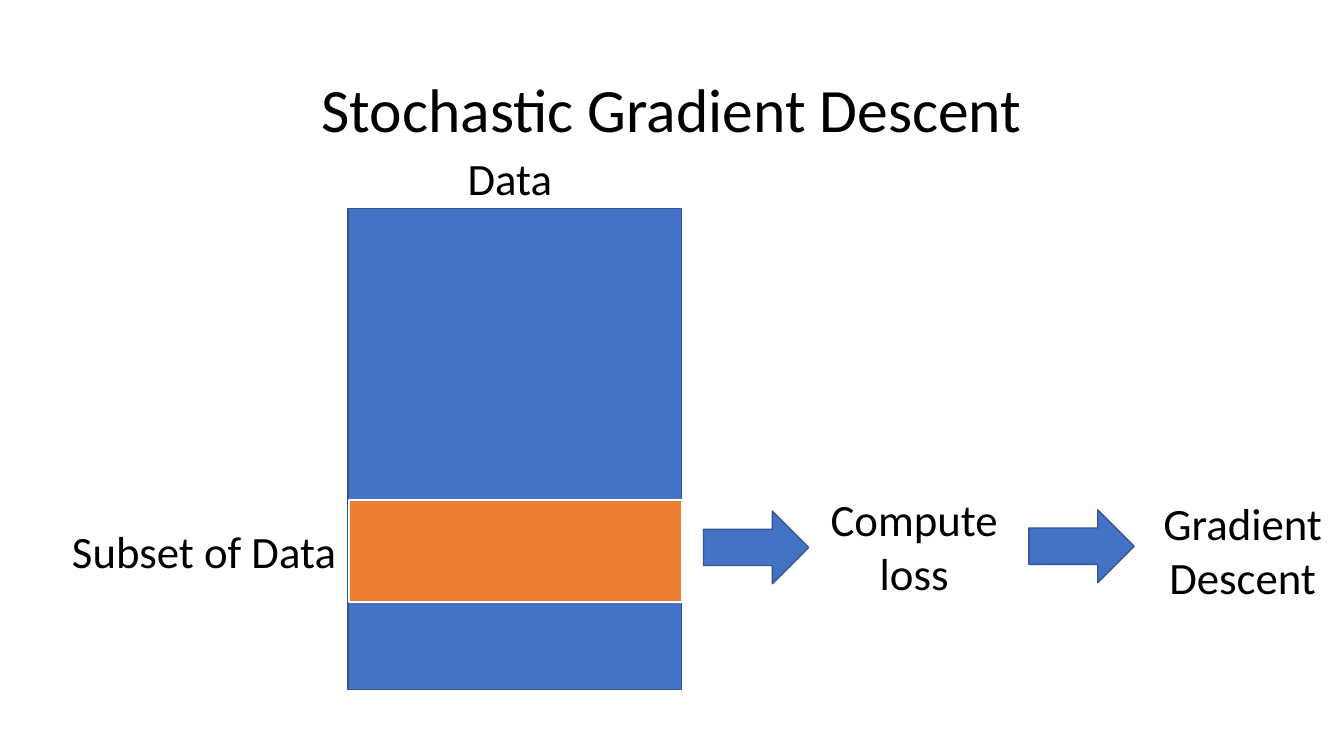
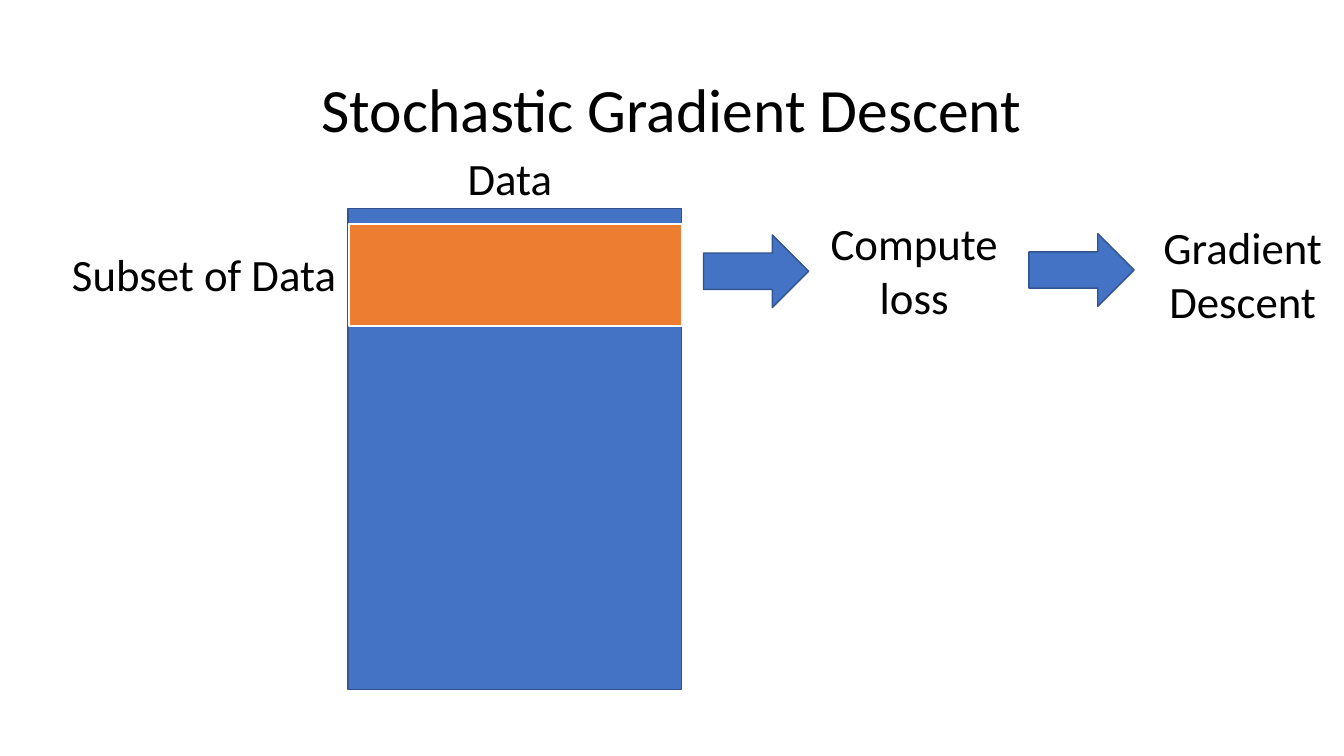
from pptx import Presentation
from pptx.dml.color import RGBColor
from pptx.enum.shapes import MSO_SHAPE
from pptx.enum.text import MSO_ANCHOR, PP_ALIGN
from pptx.util import Cm, Pt

RECTANGLE, ARROW = MSO_SHAPE.RECTANGLE, MSO_SHAPE.RIGHT_ARROW
CENTER, MIDDLE = PP_ALIGN.CENTER, MSO_ANCHOR.MIDDLE
TITLE_ONLY = 5

FONT = "Calibri"
COLORS = {"text": "000000", "data": "4472C4", "outline": "325491",
          "subset": "ED7D31", "white": "FFFFFF"}

TITLE = "Stochastic Gradient Descent"
SUBSET_TOPS = [12.6, 5.64]  # cm, one slide for each sampled subset

# Boxes are left, top, width, height in cm
TITLE_BOX = (2.33, 1, 29.21, 3.68)
DATA_BOX = (8.77, 5.26, 8.4, 12.12)
DATA_LABEL = ("Data", (9.37, 3.68, 6.96, 1.63))

# Tops in the step row are measured from the top of the subset
SUBSET_BOX = (8.8, 0, 8.4, 2.57)
STEP_ARROWS = [(17.73, 0.28, 2.65, 1.83), (25.93, 0.25, 2.65, 1.83)]
STEP_LABELS = [
    ("Subset of Data", (0, 0.46, 10.29, 1.63)),
    ("Compute loss", (20.65, -0.33, 4.78, 3)),
    ("Gradient\nDescent", (28.93, -0.23, 4.78, 3)),
]


def color(name):
    return RGBColor.from_string(COLORS[name])


def to_cm(box):
    return [Cm(length) for length in box]


def moved_down(box, distance):
    left, top, width, height = box
    return left, top + distance, width, height


def write(paragraph, text, size):
    """Write centred text, with a line break at each newline."""
    paragraph.alignment = CENTER
    for index, line in enumerate(text.split("\n")):
        if index:
            paragraph.add_line_break()
        run = paragraph.add_run()
        run.text = line
        run.font.name = FONT
        run.font.size = Pt(size)
        run.font.color.rgb = color("text")


def add_title(slide):
    title = slide.shapes.title
    title.left, title.top, title.width, title.height = to_cm(TITLE_BOX)
    title.text_frame.vertical_anchor = MIDDLE
    paragraph = title.text_frame.paragraphs[0]
    paragraph.line_spacing = 0.9
    write(paragraph, TITLE, 44)


def add_label(slide, text, box):
    frame = slide.shapes.add_textbox(*to_cm(box)).text_frame
    frame.word_wrap = True
    write(frame.paragraphs[0], text, 32)


def add_block(slide, kind, box, fill="data", outline="outline", line_width=1):
    shape = slide.shapes.add_shape(kind, *to_cm(box))
    shape.shadow.inherit = False
    shape.fill.solid()
    shape.fill.fore_color.rgb = color(fill)
    shape.line.color.rgb = color(outline)
    shape.line.width = Pt(line_width)


def add_step_row(slide, top):
    add_block(slide, RECTANGLE, moved_down(SUBSET_BOX, top), "subset", "white", 1.5)
    for box in STEP_ARROWS:
        add_block(slide, ARROW, moved_down(box, top))
    for text, box in STEP_LABELS:
        add_label(slide, text, moved_down(box, top))


def main():
    presentation = Presentation()
    presentation.slide_width, presentation.slide_height = Cm(33.87), Cm(19.05)
    for subset_top in SUBSET_TOPS:
        slide = presentation.slides.add_slide(presentation.slide_layouts[TITLE_ONLY])
        add_title(slide)
        add_block(slide, RECTANGLE, DATA_BOX)
        add_label(slide, *DATA_LABEL)
        add_step_row(slide, subset_top)
    presentation.save("out.pptx")


if __name__ == "__main__":
    main()
